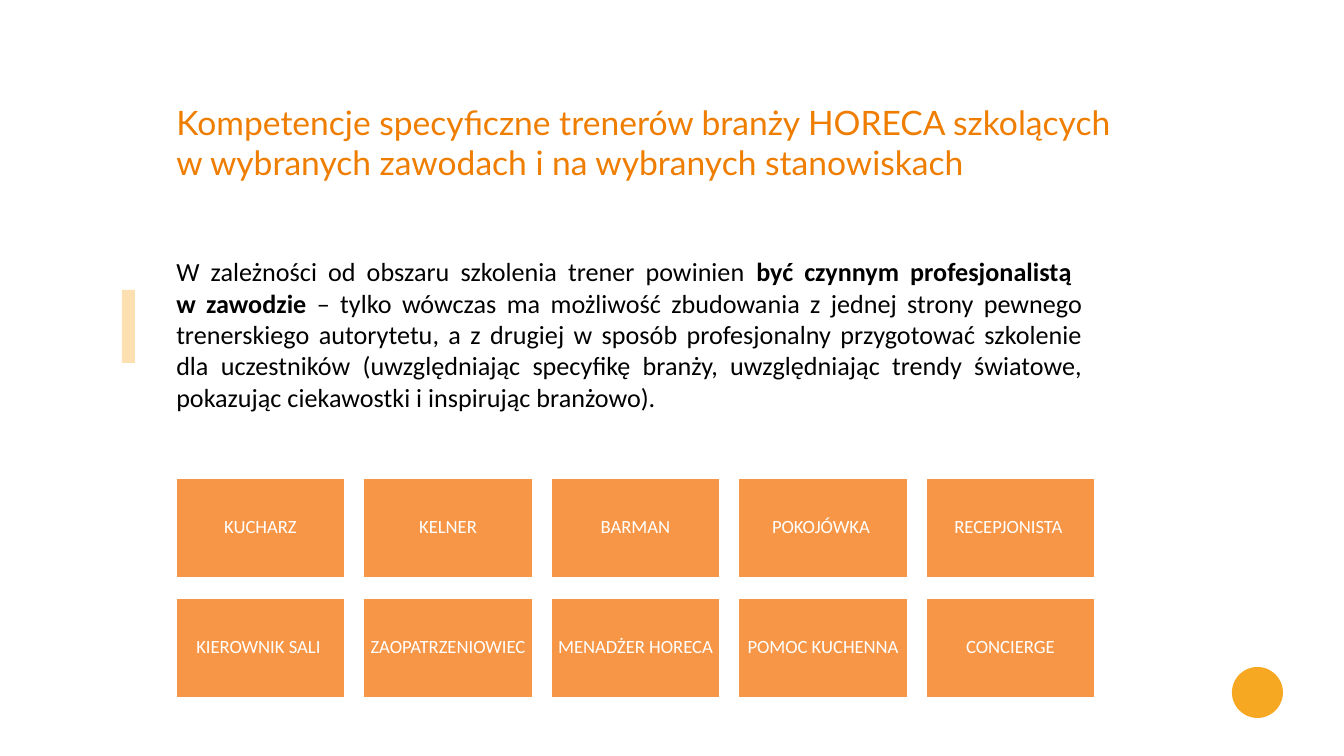
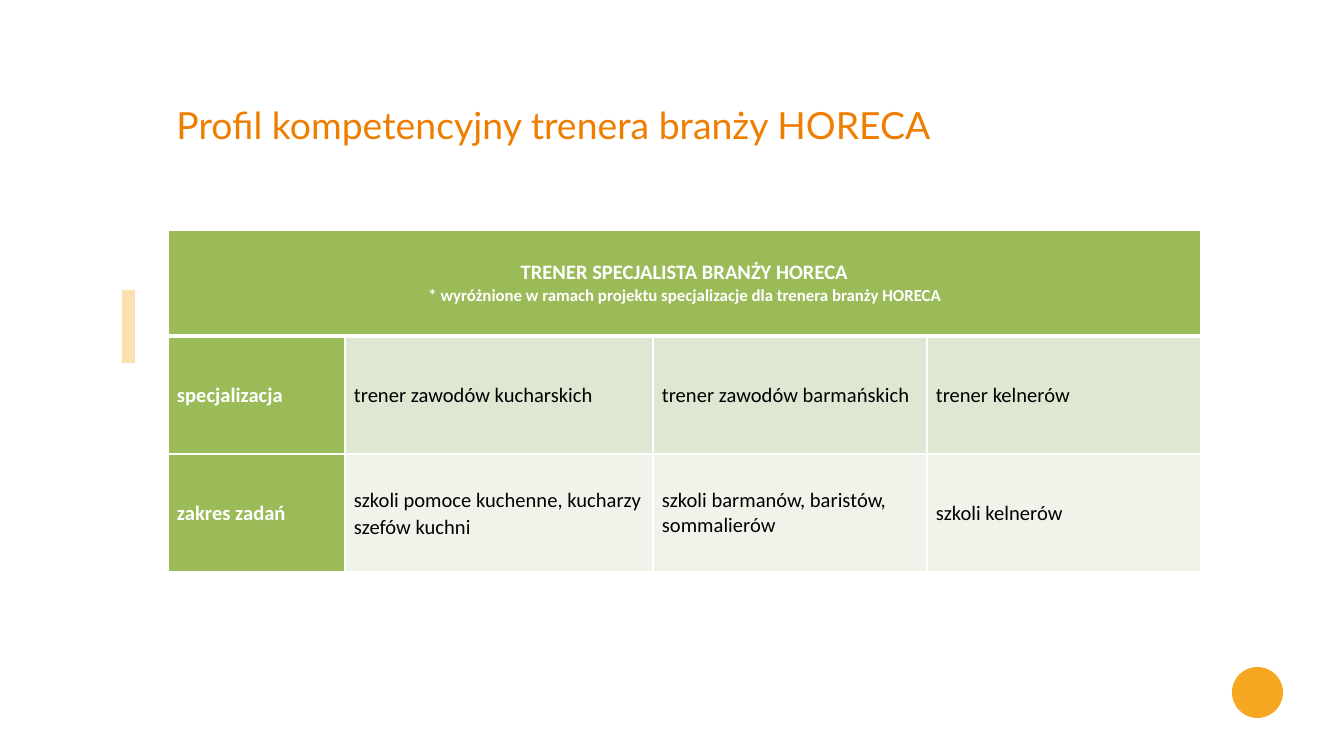
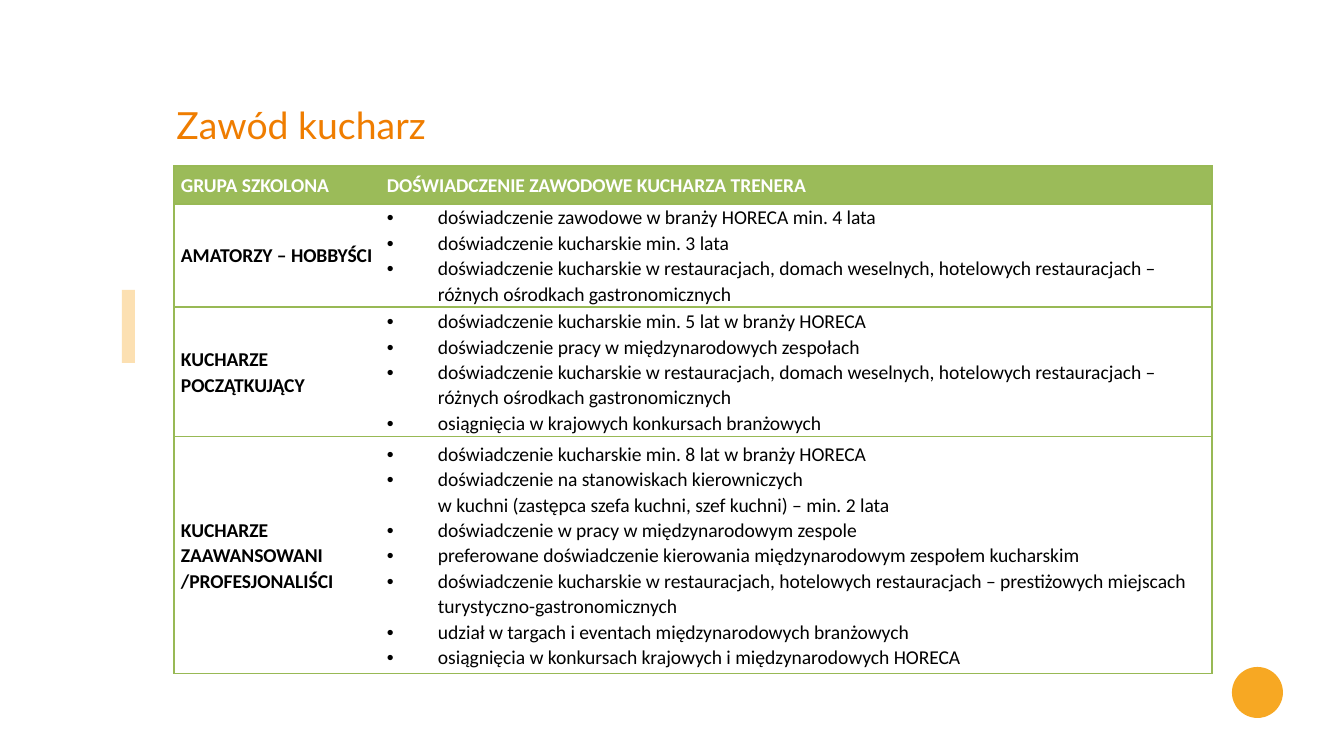
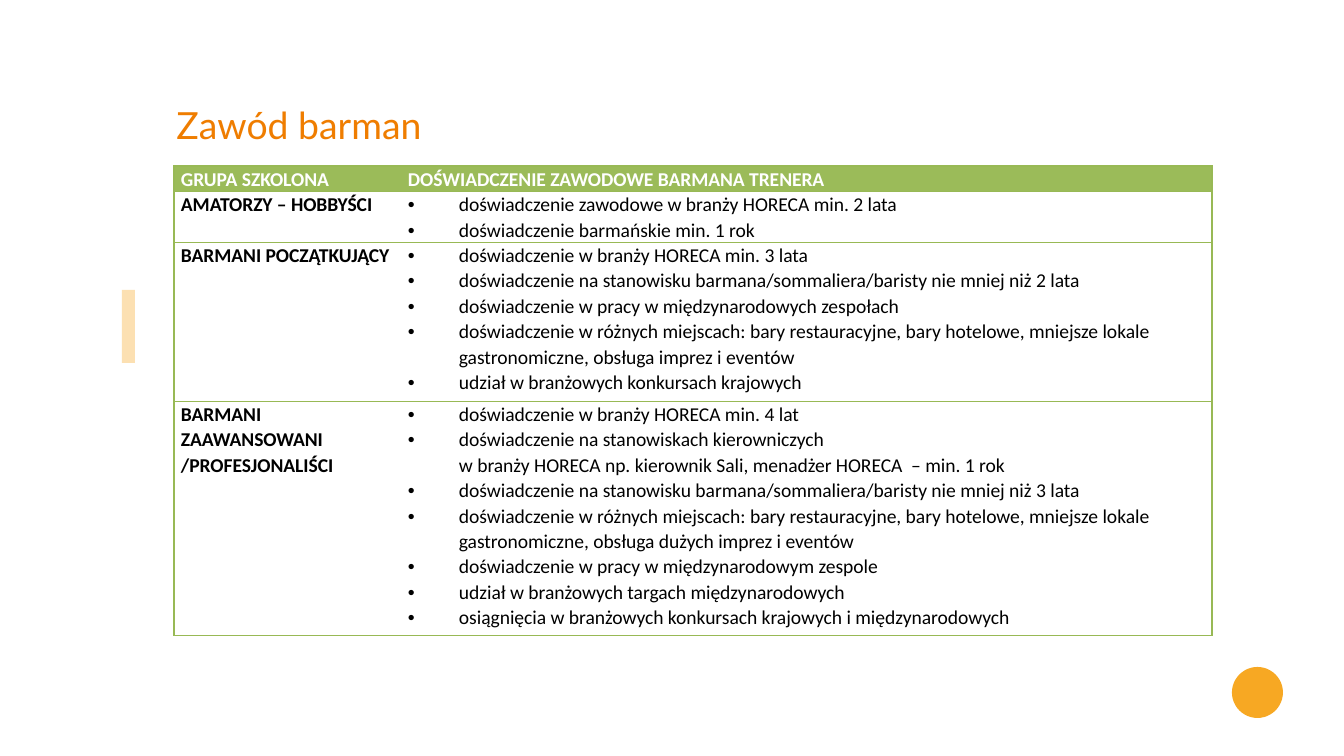
import dataclasses

import lxml.etree
import pptx
import pptx.dml.color
import pptx.enum.shapes
import pptx.enum.text
import pptx.oxml.ns
import pptx.util

EMU_PER_PX = 914400 / 134.4
NO_STYLE_NO_GRID = "{2D5ABB26-0587-4C30-8999-92F81FD0307C}"
TITLE_ONLY_LAYOUT = 5

qn = pptx.oxml.ns.qn
ALIGN = pptx.enum.text.PP_ALIGN
ANCHOR = pptx.enum.text.MSO_ANCHOR
SHAPE = pptx.enum.shapes.MSO_SHAPE


@dataclasses.dataclass(frozen=True)
class Theme:
    title_font: str = "Lato"
    body_font: str = "Calibri"
    title: str = "EF7D00"
    accent: str = "F7A823"
    card: str = "F79646"
    header: str = "9BBB59"
    grid: str = "98B955"
    band_dark: str = "DEE7D1"
    band_light: str = "EFF3EA"
    text: str = "000000"
    white: str = "FFFFFF"
    title_size: float = 20
    long_title_size: float = 18
    body_size: float = 14
    profile_size: float = 11
    experience_size: float = 10.5
    card_size: float = 10
    note_size: float = 9
    line_spacing: float = 1.07
    accent_opacity: int = 35


THEME = Theme()


@dataclasses.dataclass(frozen=True)
class Box:
    left: float
    top: float
    width: float
    height: float

    def emu(self):
        return [px(value) for value in dataclasses.astuple(self)]


TITLE_BOX = Box(163, 95, 1070, 59)
LONG_TITLE_BOX = Box(163, 95, 1070, 96)
BODY_BOX = Box(163, 249, 933, 172)
CARDS_BOX = Box(175, 477, 921, 222)
PROFILE_BOX = Box(168, 230, 1033, 342)
EXPERIENCE_BOX = Box(174, 166, 1038, 508)
BAR_BOX = Box(122, 290, 13, 73)
DOT_BOX = Box(1232, 667, 51, 51)


def px(value):
    return pptx.util.Emu(round(value * EMU_PER_PX))


def rgb(value):
    return pptx.dml.color.RGBColor.from_string(value)


def write(paragraph, text, size, color, bold=False, font=THEME.body_font):
    """Add runs to the paragraph, with a line break at each newline."""
    for index, line in enumerate(text.split("\n")):
        if index:
            paragraph.add_line_break()
            line_break = paragraph._p[-1]
            lxml.etree.SubElement(line_break, qn("a:rPr"), sz=str(round(size * 100)))
        if line:
            run = paragraph.add_run()
            run.text = line
            run.font.name = font
            run.font.size = pptx.util.Pt(size)
            run.font.bold = bold
            run.font.color.rgb = rgb(color)


def add_filled_shape(slide, kind, box, color):
    shape = slide.shapes.add_shape(kind, *box.emu())
    shape.shadow.inherit = False
    shape.fill.solid()
    shape.fill.fore_color.rgb = rgb(color)
    shape.line.fill.background()
    return shape


def add_decoration(slide):
    bar = add_filled_shape(slide, SHAPE.RECTANGLE, BAR_BOX, THEME.accent)
    color = bar.element.spPr.find(".//" + qn("a:srgbClr"))
    lxml.etree.SubElement(color, qn("a:alpha"), val=str(THEME.accent_opacity * 1000))
    add_filled_shape(slide, SHAPE.OVAL, DOT_BOX, THEME.accent)


def add_titled_slide(presentation, text, box=TITLE_BOX, size=THEME.title_size):
    slide = presentation.slides.add_slide(presentation.slide_layouts[TITLE_ONLY_LAYOUT])
    add_decoration(slide)
    title = slide.shapes.title
    title.left, title.top, title.width, title.height = box.emu()
    frame = title.text_frame
    frame.auto_size = pptx.enum.text.MSO_AUTO_SIZE.NONE
    frame.vertical_anchor = ANCHOR.TOP
    frame.word_wrap = True
    paragraph = frame.paragraphs[0]
    paragraph.alignment = ALIGN.LEFT
    write(paragraph, text, size, THEME.title, font=THEME.title_font)
    return slide


def add_body(slide, box, parts):
    """Add one justified paragraph from (text, bold) parts."""
    frame = slide.shapes.add_textbox(*box.emu()).text_frame
    frame.word_wrap = True
    paragraph = frame.paragraphs[0]
    paragraph.alignment = ALIGN.JUSTIFY
    for text, bold in parts:
        write(paragraph, text, THEME.body_size, THEME.text, bold)


def add_cards(slide, box, rows, card_width=171, card_height=102):
    step_x = (box.width - card_width) / (len(rows[0]) - 1)
    step_y = (box.height - card_height) / (len(rows) - 1)
    for row, labels in enumerate(rows):
        for column, label in enumerate(labels):
            card_box = Box(box.left + column * step_x, box.top + row * step_y,
                           card_width, card_height)
            card = add_filled_shape(slide, SHAPE.RECTANGLE, card_box, THEME.card)
            card.line.color.rgb = rgb(THEME.white)
            card.line.width = pptx.util.Pt(2)
            frame = card.text_frame
            frame.word_wrap = True
            frame.vertical_anchor = ANCHOR.MIDDLE
            frame.margin_left = frame.margin_right = px(5)
            frame.margin_top = frame.margin_bottom = px(5)
            paragraph = frame.paragraphs[0]
            paragraph.alignment = ALIGN.CENTER
            paragraph.line_spacing = 0.9
            write(paragraph, label, THEME.card_size, THEME.white)


def add_plain_table(slide, box, widths, heights):
    frame = slide.shapes.add_table(len(heights), len(widths), *box.emu())
    table = frame.table
    table.first_row = table.horz_banding = False
    table._tbl.find(".//" + qn("a:tableStyleId")).text = NO_STYLE_NO_GRID
    for column, width in zip(table.columns, widths):
        column.width = px(width)
    for row, height in zip(table.rows, heights):
        row.height = px(height)
    return table


def format_cell(cell, margin, anchor, fill, borders):
    """Format a cell; borders maps the sides L, R, T, B to (colour, points)."""
    cell.margin_left = cell.margin_right = px(margin)
    cell.margin_top = cell.margin_bottom = 0
    cell.vertical_anchor = anchor
    properties = cell._tc.get_or_add_tcPr()
    for side in "LRTB":
        if side in borders:
            color, points = borders[side]
            line = lxml.etree.SubElement(properties, qn("a:ln" + side),
                                         w=str(pptx.util.Pt(points)))
            solid = lxml.etree.SubElement(line, qn("a:solidFill"))
            lxml.etree.SubElement(solid, qn("a:srgbClr"), val=color)
    if fill:
        cell.fill.solid()
        cell.fill.fore_color.rgb = rgb(fill)
    else:
        cell.fill.background()


def add_profile_table(slide, box, heading, note, rows):
    table = add_plain_table(slide, box, (177, 308, 274, 274), (106, 118, 118))
    thin, thick = (THEME.white, 1), (THEME.white, 3)
    bands = (THEME.header, THEME.band_dark, THEME.band_light)
    for row, band in enumerate(bands):
        for column in range(len(table.columns)):
            borders = dict.fromkeys("LRTB", thin)
            if row == 0:
                borders["B"] = thick
            elif row == 1:
                borders["T"] = thick
            format_cell(table.cell(row, column), 9, ANCHOR.MIDDLE,
                        band if column else THEME.header, borders)

    header = table.cell(0, 0)
    header.merge(table.cell(0, len(table.columns) - 1))
    first = header.text_frame.paragraphs[0]
    second = header.text_frame.add_paragraph()
    first.alignment = second.alignment = ALIGN.CENTER
    write(first, heading, THEME.profile_size, THEME.white, True)
    write(second, note, THEME.note_size, THEME.white, True)

    for row, texts in enumerate(rows, start=1):
        for column, text in enumerate(texts):
            paragraph = table.cell(row, column).text_frame.paragraphs[0]
            if column < 2:
                paragraph.line_spacing = THEME.line_spacing
            is_label = column == 0
            write(paragraph, text, THEME.profile_size,
                  THEME.white if is_label else THEME.text, is_label)


def set_bullet(paragraph, indent=51):
    properties = paragraph._p.get_or_add_pPr()
    properties.set("marL", str(px(indent)))
    properties.set("indent", str(-px(indent)))
    lxml.etree.SubElement(properties, qn("a:buFont"), typeface="Arial")
    lxml.etree.SubElement(properties, qn("a:buChar"), char="•")


def add_experience_table(slide, box, widths, heights, anchor, headings, groups):
    """Add a table of trained groups, each with its bulleted requirements."""
    table = add_plain_table(slide, box, widths, heights)
    edge = (THEME.grid, 0.75)
    rows = [(headings[0], [headings[1]])] + groups
    for row, (label, requirements) in enumerate(rows):
        is_header = row == 0
        color = THEME.white if is_header else THEME.text
        fill = THEME.header if is_header else None
        for column, texts in enumerate(([label], requirements)):
            cell = table.cell(row, column)
            format_cell(cell, 7, anchor, fill,
                        dict.fromkeys("RTB" if column else "LTB", edge))
            frame = cell.text_frame
            for index, text in enumerate(texts):
                paragraph = frame.add_paragraph() if index else frame.paragraphs[0]
                paragraph.line_spacing = THEME.line_spacing
                is_requirement = column == 1 and not is_header
                if is_requirement:
                    set_bullet(paragraph)
                write(paragraph, text, THEME.experience_size, color, not is_requirement)


def build_competences(presentation):
    slide = add_titled_slide(
        presentation,
        "Kompetencje specyficzne trenerów branży HORECA szkolących \n"
        "w wybranych zawodach i na wybranych stanowiskach",
        LONG_TITLE_BOX, THEME.long_title_size)
    add_body(slide, BODY_BOX, [
        ("W zależności od obszaru szkolenia trener powinien ", False),
        ("być czynnym profesjonalistą \nw zawodzie ", True),
        ("– tylko wówczas ma możliwość zbudowania z jednej strony pewnego trenerskiego "
         "autorytetu, a z drugiej w sposób profesjonalny przygotować szkolenie dla "
         "uczestników (uwzględniając specyfikę branży, uwzględniając trendy światowe, "
         "pokazując ciekawostki i inspirując branżowo).", False),
    ])
    add_cards(slide, CARDS_BOX, [
        ["KUCHARZ", "KELNER", "BARMAN", "POKOJÓWKA ", "RECEPJONISTA "],
        ["KIEROWNIK SALI ", "ZAOPATRZENIOWIEC", "MENADŻER HORECA",
         "POMOC KUCHENNA", "CONCIERGE"],
    ])


def build_profile(presentation):
    slide = add_titled_slide(presentation, "Profil kompetencyjny trenera branży HORECA")
    add_profile_table(
        slide, PROFILE_BOX, "TRENER SPECJALISTA BRANŻY HORECA",
        "* wyróżnione w ramach projektu specjalizacje dla trenera branży HORECA",
        [
            ["specjalizacja", "trener zawodów kucharskich",
             "trener zawodów barmańskich", "trener kelnerów"],
            ["zakres zadań", "szkoli pomoce kuchenne, kucharzy szefów kuchni",
             "szkoli barmanów, baristów, sommalierów", "szkoli kelnerów"],
        ])


def build_cook(presentation):
    slide = add_titled_slide(presentation, "Zawód kucharz")
    varied_places = ("doświadczenie kucharskie w restauracjach, domach weselnych, "
                     "hotelowych restauracjach – różnych ośrodkach gastronomicznych")
    add_experience_table(
        slide, EXPERIENCE_BOX, (206, 832), (38, 103, 130, 237), ANCHOR.MIDDLE,
        ("GRUPA SZKOLONA", "DOŚWIADCZENIE ZAWODOWE KUCHARZA TRENERA"),
        [
            ("AMATORZY – HOBBYŚCI", [
                "doświadczenie zawodowe w branży HORECA min. 4 lata",
                "doświadczenie kucharskie min. 3 lata",
                varied_places,
            ]),
            ("KUCHARZE POCZĄTKUJĄCY", [
                "doświadczenie kucharskie min. 5 lat w branży HORECA",
                "doświadczenie pracy w międzynarodowych zespołach",
                varied_places,
                "osiągnięcia w krajowych konkursach branżowych",
            ]),
            ("KUCHARZE ZAAWANSOWANI /PROFESJONALIŚCI", [
                "doświadczenie kucharskie min. 8 lat w branży HORECA",
                "doświadczenie na stanowiskach kierowniczych \n"
                "w kuchni (zastępca szefa kuchni, szef kuchni) – min. 2 lata",
                "doświadczenie w pracy w międzynarodowym zespole",
                "preferowane doświadczenie kierowania międzynarodowym zespołem kucharskim",
                "doświadczenie kucharskie w restauracjach, hotelowych restauracjach – "
                "prestiżowych miejscach turystyczno-gastronomicznych",
                "udział w targach i eventach międzynarodowych branżowych",
                "osiągnięcia w konkursach krajowych i międzynarodowych HORECA",
            ]),
        ])


def build_barman(presentation):
    slide = add_titled_slide(presentation, "Zawód barman")
    position = "doświadczenie na stanowisku barmana/sommaliera/baristy nie mniej niż "
    varied_places = ("doświadczenie w różnych miejscach: bary restauracyjne, bary hotelowe, "
                     "mniejsze lokale gastronomiczne, obsługa ")
    add_experience_table(
        slide, dataclasses.replace(EXPERIENCE_BOX, height=468),
        (227, 811), (25, 50, 159, 234), ANCHOR.TOP,
        ("GRUPA SZKOLONA", "DOŚWIADCZENIE ZAWODOWE BARMANA TRENERA"),
        [
            ("AMATORZY – HOBBYŚCI", [
                "doświadczenie zawodowe w branży HORECA min. 2 lata",
                "doświadczenie barmańskie min. 1 rok",
            ]),
            ("BARMANI POCZĄTKUJĄCY", [
                "doświadczenie w branży HORECA min. 3 lata",
                position + "2 lata",
                "doświadczenie w pracy w międzynarodowych zespołach",
                varied_places + "imprez i eventów",
                "udział w branżowych konkursach krajowych",
            ]),
            ("BARMANI ZAAWANSOWANI /PROFESJONALIŚCI", [
                "doświadczenie w branży HORECA min. 4 lat",
                "doświadczenie na stanowiskach kierowniczych \n"
                "w branży HORECA np. kierownik Sali, menadżer HORECA  – min. 1 rok",
                position + "3 lata",
                varied_places + "dużych imprez i eventów",
                "doświadczenie w pracy w międzynarodowym zespole",
                "udział w branżowych targach międzynarodowych",
                "osiągnięcia w branżowych konkursach krajowych i międzynarodowych",
            ]),
        ])


def main():
    presentation = pptx.Presentation()
    presentation.slide_width = px(1344)
    presentation.slide_height = px(756)
    for build in (build_competences, build_profile, build_cook, build_barman):
        build(presentation)
    presentation.save("out.pptx")


if __name__ == "__main__":
    main()
